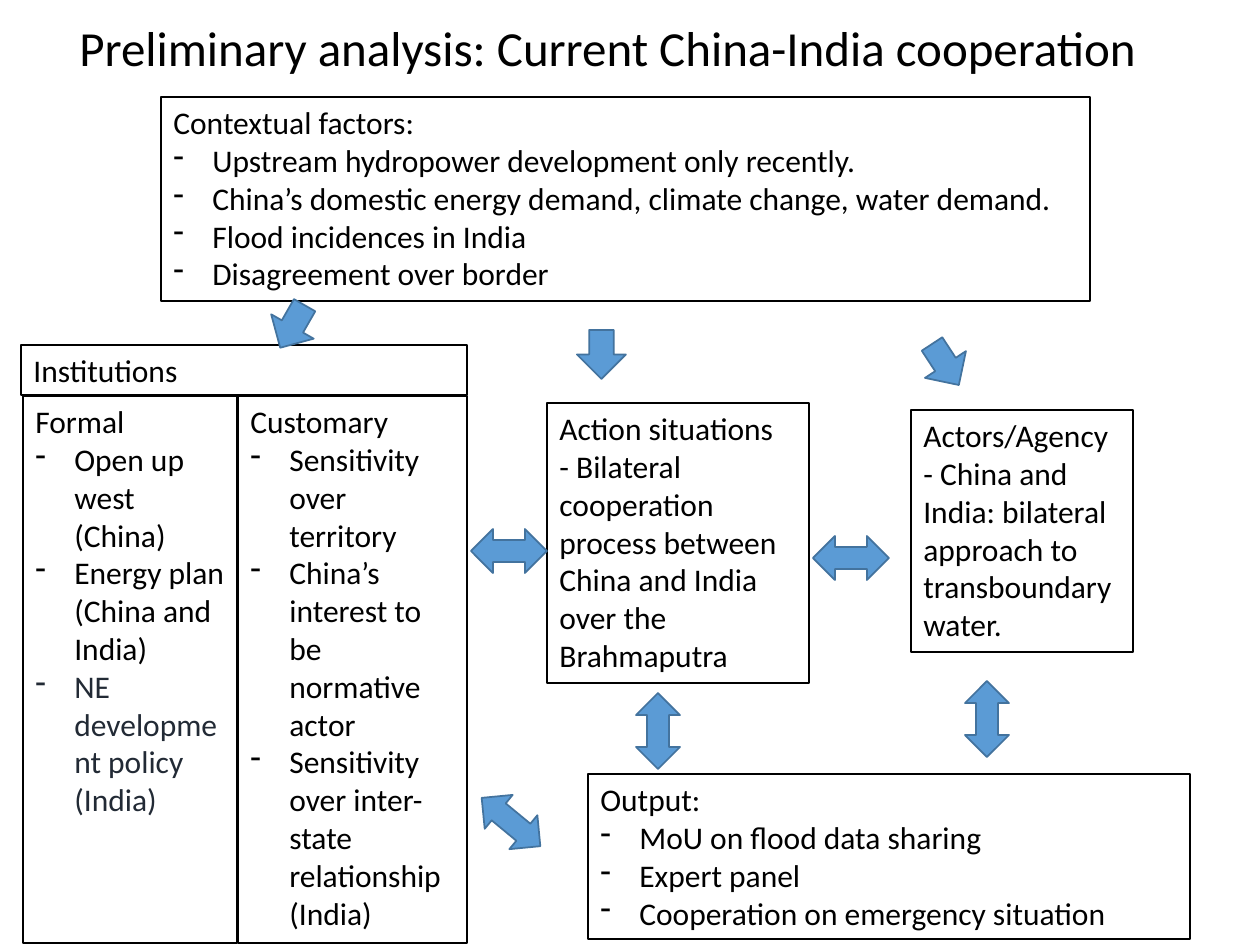
from pptx import Presentation
from pptx.dml.color import RGBColor
from pptx.enum.shapes import MSO_SHAPE
from pptx.enum.text import MSO_ANCHOR, MSO_AUTO_SIZE, PP_ALIGN
from pptx.oxml.xmlchemy import OxmlElement
from pptx.util import Emu, Pt

PX = 914400 // 126
THEME = {
    "font": "Calibri",
    "title_size": Pt(28),
    "body_size": Pt(18),
    "text": RGBColor.from_string("000000"),
    "muted": RGBColor.from_string("222A35"),
    "arrow": RGBColor.from_string("5B9BD5"),
    "arrow_line": RGBColor.from_string("43739E"),
}
INDENT = 39


def write_text(box, lines, size):
    frame = box.text_frame
    frame.word_wrap = True
    frame.text = "\n".join(lines)
    for para in frame.paragraphs:
        para.alignment = PP_ALIGN.LEFT
        for span in para.runs:
            span.font.name = THEME["font"]
            span.font.size = size
            span.font.color.rgb = THEME["text"]


def add_dash(para):
    properties = para._p.get_or_add_pPr()
    properties.set("marL", str(INDENT * PX))
    properties.set("indent", str(-INDENT * PX))
    bullet = OxmlElement("a:buChar")
    bullet.set("char", "-")
    properties.append(bullet)


deck = Presentation()
deck.slide_width, deck.slide_height = Emu(1260 * PX), Emu(945 * PX)
page = deck.slides.add_slide(deck.slide_layouts[6])

# Title
title = page.shapes.add_textbox(*(Emu(n * PX) for n in (67, 4, 1086, 93)))
write_text(title, ["Preliminary analysis: Current China-India cooperation"], THEME["title_size"])
title.text_frame.vertical_anchor = MSO_ANCHOR.MIDDLE
title.text_frame.paragraphs[0].line_spacing = 0.9

# Framework boxes: position, heading, bulleted lines, plain lines
boxes = [
    ((161, 97, 929, 204), "Contextual factors:", [
        "Upstream hydropower development only recently.",
        "China’s domestic energy demand, climate change, water demand.",
        "Flood incidences in India",
        "Disagreement over border"], []),
    ((23, 396, 214, 547), "Formal", [
        "Open up west (China)",
        "Energy plan (China and India)",
        "NE development policy (India)"], []),
    ((21, 345, 446, 50), "Institutions", [], []),
    ((238, 396, 229, 547), "Customary", [
        "Sensitivity over territory",
        "China’s interest to be normative actor",
        "Sensitivity over inter-state relationship (India)"], []),
    ((547, 403, 262, 280), "Action situations", [], [
        "- Bilateral cooperation process between China and India over the Brahmaputra"]),
    ((911, 410, 222, 242), "Actors/Agency", [], [
        "- China and India: bilateral approach to transboundary water."]),
    ((588, 774, 602, 165), "Output:", [
        "MoU on flood data sharing",
        "Expert panel",
        "Cooperation on emergency situation"], []),
]
for place, heading, bullets, plain in boxes:
    box = page.shapes.add_shape(MSO_SHAPE.RECTANGLE, *(Emu(n * PX) for n in place))
    box.shadow.inherit = False
    box.fill.background()
    box.line.color.rgb = THEME["text"]
    box.line.width = Pt(0.75)
    write_text(box, [heading, *bullets, *plain], THEME["body_size"])
    box.text_frame.vertical_anchor = MSO_ANCHOR.TOP
    box.text_frame.auto_size = MSO_AUTO_SIZE.SHAPE_TO_FIT_TEXT
    for para in box.text_frame.paragraphs[1:len(bullets) + 1]:
        add_dash(para)
    if heading == "Formal":
        box.text_frame.paragraphs[-1].runs[0].font.color.rgb = THEME["muted"]

# Arrows: each kind has one size; entries are left, top, rotation
arrow_groups = [
    (MSO_SHAPE.DOWN_ARROW, (49, 49),
     [(268, 302, 29.8), (577, 330, 0), (921, 340, 326.8)]),
    (MSO_SHAPE.LEFT_RIGHT_ARROW, (76, 44),
     [(471, 529, 0), (813, 536, 0), (620, 709, 270), (949, 697, 270), (473, 800, 219.5)]),
]
for kind, size, places in arrow_groups:
    for left, top, rotation in places:
        arrow = page.shapes.add_shape(kind, *(Emu(n * PX) for n in (left, top, *size)))
        arrow.rotation = rotation
        arrow.shadow.inherit = False
        arrow.fill.solid()
        arrow.fill.fore_color.rgb = THEME["arrow"]
        arrow.line.color.rgb = THEME["arrow_line"]
        arrow.line.width = Pt(1)

deck.save("out.pptx")
